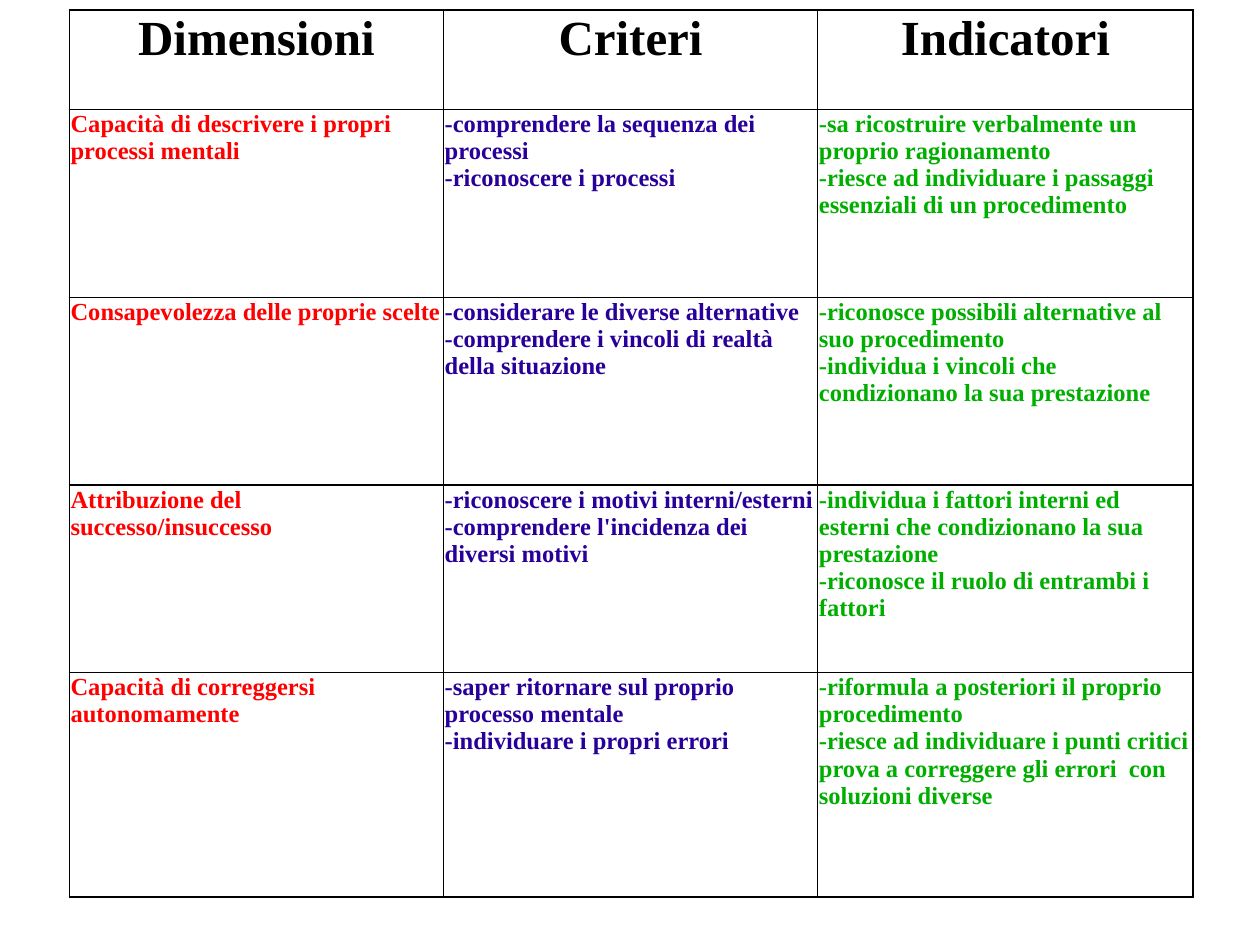
from dataclasses import dataclass

from lxml import etree
from pptx import Presentation
from pptx.dml.color import RGBColor
from pptx.enum.text import MSO_ANCHOR, PP_ALIGN
from pptx.oxml.ns import qn
from pptx.util import Inches, Pt

LEFT, CENTER = PP_ALIGN.LEFT, PP_ALIGN.CENTER
TOP = MSO_ANCHOR.TOP

BLACK, WHITE = "000000", "FFFFFF"
FONT_NAME = "Times New Roman"
TABLE_LEFT, TABLE_TOP = 0.55, 0.08
COLUMN_WIDTHS = [2.97, 2.97, 2.98]
ROW_HEIGHTS = [0.79, 1.49, 1.49, 1.49, 1.78]
CELL_INSET = Inches(0.01)
CELL_FORMAT = {
    "margin_left": CELL_INSET,
    "margin_right": CELL_INSET,
    "margin_top": CELL_INSET,
    "margin_bottom": CELL_INSET,
    "vertical_anchor": TOP,
}


@dataclass(frozen=True)
class TextStyle:
    size: int
    color: str
    align: PP_ALIGN = LEFT


@dataclass(frozen=True)
class Column:
    heading: str
    color: str
    entries: list[list[str]]  # one list of paragraphs per body row


HEADING_STYLE = TextStyle(28, BLACK, CENTER)
COLUMNS = [
    Column("Dimensioni", "FF0000", [
        ["Capacità di descrivere i propri processi mentali"],
        ["Consapevolezza delle proprie scelte"],
        ["Attribuzione del successo/insuccesso"],
        ["Capacità di correggersi autonomamente"],
    ]),
    Column("Criteri", "280099", [
        ["-comprendere la sequenza dei processi",
         "-riconoscere i processi"],
        ["-considerare le diverse alternative",
         "-comprendere i vincoli di realtà della situazione"],
        ["-riconoscere i motivi interni/esterni",
         "-comprendere l'incidenza dei diversi motivi"],
        ["-saper ritornare sul proprio processo mentale",
         "-individuare i propri errori"],
    ]),
    Column("Indicatori", "00AE00", [
        ["-sa ricostruire verbalmente un proprio ragionamento",
         "-riesce ad individuare i passaggi essenziali di un procedimento"],
        ["-riconosce possibili alternative al suo procedimento",
         "-individua i vincoli che condizionano la sua prestazione"],
        ["-individua i fattori interni ed esterni che condizionano la sua prestazione",
         "-riconosce il ruolo di entrambi i fattori"],
        ["-riformula a posteriori il proprio procedimento",
         "-riesce ad individuare i punti critici",
         "prova a correggere gli errori  con soluzioni diverse"],
    ]),
]


def rgb(color: str) -> RGBColor:
    return RGBColor.from_string(color)


def set_attributes(target, values: dict) -> None:
    for name, value in values.items():
        setattr(target, name, value)


def add_borders(cell, color: str = BLACK, width: float = 1) -> None:
    """Outline all four sides; the lines must precede the cell's fill."""
    properties = cell._tc.get_or_add_tcPr()
    for position, side in enumerate(("lnL", "lnR", "lnT", "lnB")):
        line = etree.Element(qn(f"a:{side}"), w=str(Pt(width)))
        fill = etree.SubElement(line, qn("a:solidFill"))
        etree.SubElement(fill, qn("a:srgbClr"), val=color)
        properties.insert(position, line)


def fill_cell(cell, paragraphs: list[str], style: TextStyle) -> None:
    set_attributes(cell, CELL_FORMAT)
    cell.fill.solid()
    cell.fill.fore_color.rgb = rgb(WHITE)
    add_borders(cell)
    cell.text = "\n".join(paragraphs)
    for paragraph in cell.text_frame.paragraphs:
        paragraph.alignment = style.align
        font = paragraph.runs[0].font
        set_attributes(font, {"name": FONT_NAME, "size": Pt(style.size), "bold": True})
        font.color.rgb = rgb(style.color)


def add_rubric(slide) -> None:
    rubric = slide.shapes.add_table(
        len(ROW_HEIGHTS), len(COLUMNS),
        Inches(TABLE_LEFT), Inches(TABLE_TOP),
        Inches(sum(COLUMN_WIDTHS)), Inches(sum(ROW_HEIGHTS)),
    ).table
    set_attributes(rubric, {"first_row": False, "horz_banding": False})
    for grid_column, width in zip(rubric.columns, COLUMN_WIDTHS):
        grid_column.width = Inches(width)
    for grid_row, height in zip(rubric.rows, ROW_HEIGHTS):
        grid_row.height = Inches(height)

    # Heading on top, then one criterion per row
    for column_index, column in enumerate(COLUMNS):
        fill_cell(rubric.cell(0, column_index), [column.heading], HEADING_STYLE)
        body_style = TextStyle(14, column.color)
        for row_index, entry in enumerate(column.entries, start=1):
            fill_cell(rubric.cell(row_index, column_index), entry, body_style)


def main() -> None:
    presentation = Presentation()
    set_attributes(presentation, {"slide_width": Inches(10), "slide_height": Inches(7.5)})
    add_rubric(presentation.slides.add_slide(presentation.slide_layouts[6]))
    presentation.save("out.pptx")


if __name__ == "__main__":
    main()
